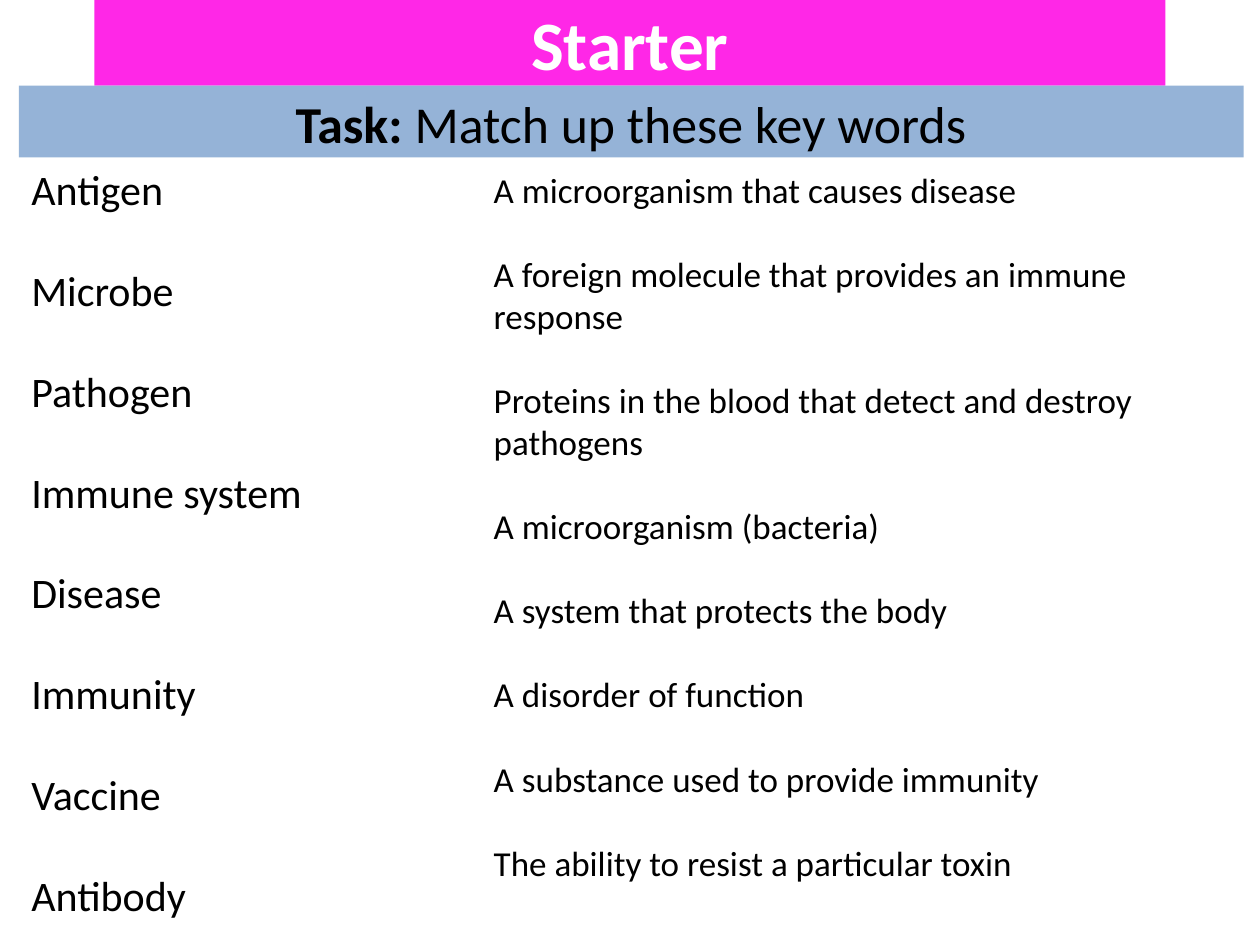
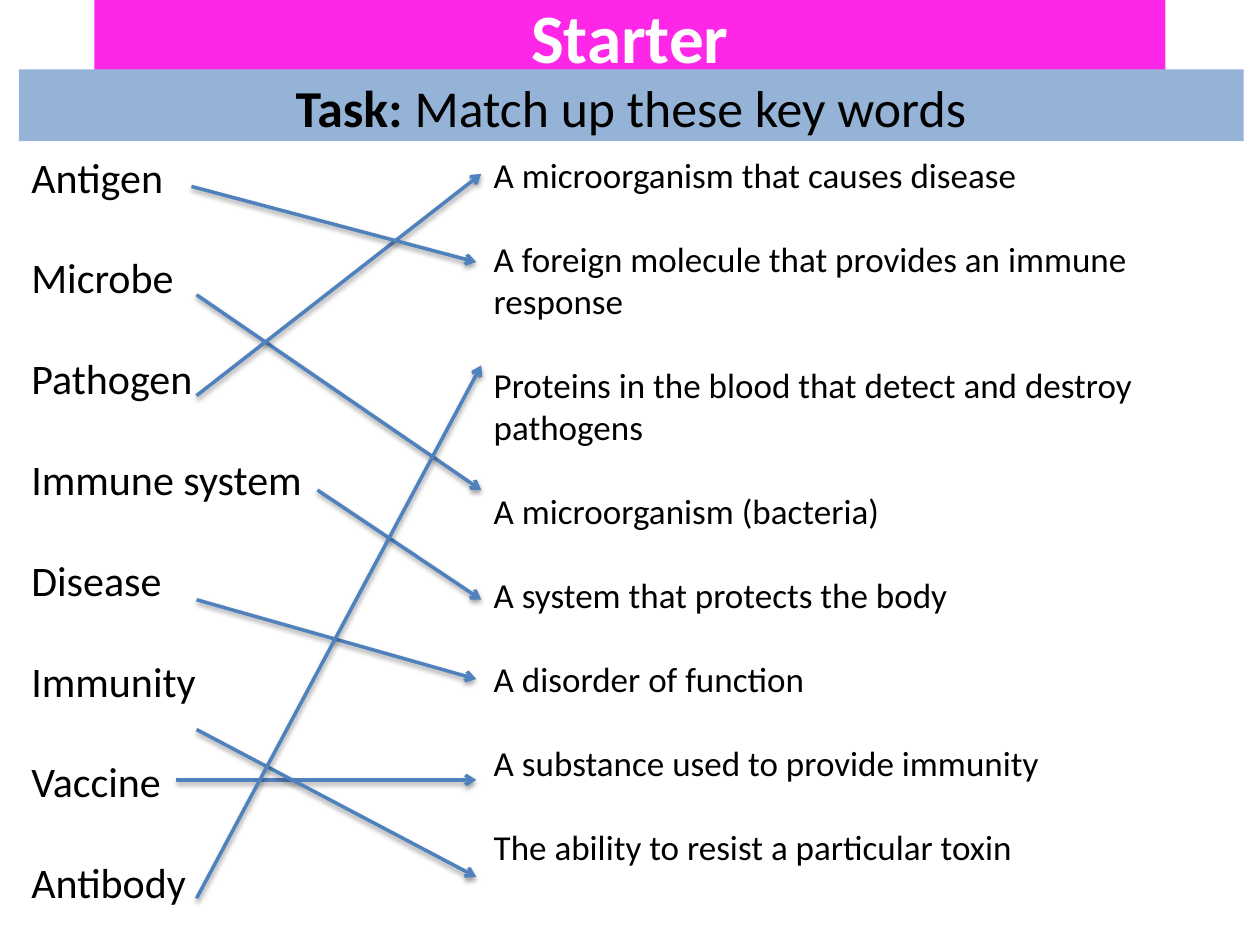
"""Build a keyword-matching starter: the task slide and its answer slide."""
from lxml import etree
from pptx import Presentation
from pptx.dml.color import RGBColor
from pptx.enum.shapes import MSO_CONNECTOR as CONNECTOR, MSO_SHAPE as SHAPE
from pptx.enum.text import MSO_ANCHOR as ANCHOR, PP_ALIGN as ALIGN
from pptx.oxml.ns import qn
from pptx.util import Inches, Pt

FONT = "Calibri"
SLIDE_WIDTH, SLIDE_HEIGHT = 10, 7.5
COLOURS = {
    "title": "FF27E7",
    "task": "95B3D7",
    "arrow": "4F81BD",
    "light": "FFFFFF",
    "dark": "000000",
}
TERMS = ["Antigen", "Microbe", "Pathogen", "Immune system",
         "Disease", "Immunity", "Vaccine", "Antibody"]
DEFINITIONS = [
    "A microorganism that causes disease",
    "A foreign molecule that provides an immune response",
    "Proteins in the blood that detect and destroy pathogens",
    "A microorganism (bacteria)",
    "A system that protects the body",
    "A disorder of function",
    "A substance used to provide immunity",
    "The ability to resist a particular toxin",
]
ANSWERS = [
    (1.56, 2.34, 3.82, 3.89),
    (1.56, 3.14, 3.82, 1.38),
    (2.52, 3.89, 3.82, 4.76),
    (1.56, 4.76, 3.78, 5.39),
    (1.40, 6.19, 3.78, 6.19),
    (1.56, 5.79, 3.78, 6.96),
    (1.56, 7.13, 3.82, 2.90),
    (1.52, 1.48, 3.78, 2.08),
]
LAYOUTS = [
    {"title_height": 0.68, "task": 0.68, "terms": 1.25, "definitions": 1.29, "answers": []},
    {"title_height": 0.57, "task": 0.55, "terms": 1.15, "definitions": 1.17, "answers": ANSWERS},
]


def add_run(paragraph, text, size, colour, bold=False):
    run = paragraph.add_run()
    run.text = text
    run.font.name = FONT
    run.font.size = Pt(size)
    run.font.bold = bold
    run.font.color.rgb = RGBColor.from_string(COLOURS[colour])


def add_band(slide, left, top, width, height, colour, anchor):
    band = slide.shapes.add_shape(
        SHAPE.RECTANGLE, Inches(left), Inches(top), Inches(width), Inches(height))
    band.shadow.inherit = False
    band.fill.solid()
    band.fill.fore_color.rgb = RGBColor.from_string(COLOURS[colour])
    band.line.fill.background()
    band.text_frame.word_wrap = True
    band.text_frame.vertical_anchor = anchor
    heading = band.text_frame.paragraphs[0]
    heading.alignment = ALIGN.CENTER
    return heading


deck = Presentation()
deck.slide_width, deck.slide_height = Inches(SLIDE_WIDTH), Inches(SLIDE_HEIGHT)

for layout in LAYOUTS:
    slide = deck.slides.add_slide(deck.slide_layouts[6])

    title = add_band(slide, 0.75, 0, 8.5, layout["title_height"], "title", ANCHOR.MIDDLE)
    add_run(title, "Starter", 39.6, "light", bold=True)

    task = add_band(slide, 0.15, layout["task"], 9.72, 0.57, "task", ANCHOR.TOP)
    add_run(task, "Task: ", 29.6, "dark", bold=True)
    add_run(task, "Match up these key words", 29.6, "dark")

    for entries, left, top, width, size in [
        (TERMS, 0.15, layout["terms"], 9.72, 24),
        (DEFINITIONS, 3.82, layout["definitions"], 6.18, 20),
    ]:
        column = slide.shapes.add_textbox(
            Inches(left), Inches(top), Inches(width), Inches(SLIDE_HEIGHT - top)).text_frame
        column.word_wrap = True
        for index, entry in enumerate(entries):
            paragraph = column.add_paragraph() if index else column.paragraphs[0]
            paragraph.space_after = Pt(size * 1.2)
            add_run(paragraph, entry, size, "dark")

    for ends in layout["answers"]:
        arrow = slide.shapes.add_connector(CONNECTOR.STRAIGHT, *map(Inches, ends))
        arrow.line.color.rgb = RGBColor.from_string(COLOURS["arrow"])
        arrow.line.width = Pt(2)
        etree.SubElement(arrow.line._get_or_add_ln(), qn("a:tailEnd"), type="arrow")
        effects = etree.SubElement(arrow._element.spPr, qn("a:effectLst"))
        shadow = etree.SubElement(
            effects, qn("a:outerShdw"), blurRad=str(Pt(3.1)), dist=str(Pt(1.6)),
            dir="5400000", rotWithShape="0")
        shade = etree.SubElement(shadow, qn("a:srgbClr"), val=COLOURS["dark"])
        etree.SubElement(shade, qn("a:alpha"), val="38000")

deck.save("out.pptx")
